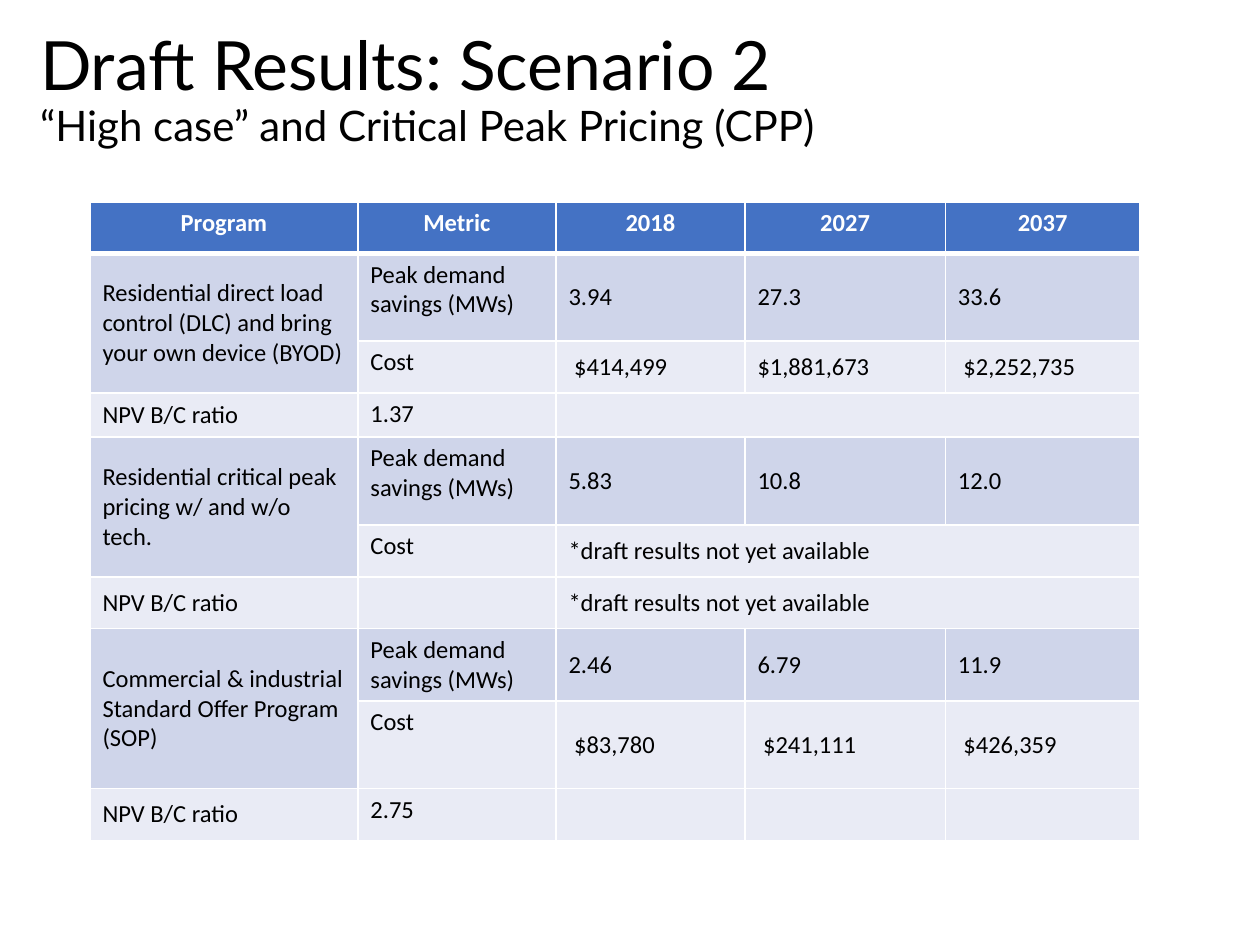
"""Build the slide of draft results for scenario 2."""
from dataclasses import dataclass

from lxml import etree
from pptx import Presentation
from pptx import util as u
from pptx.dml.color import RGBColor
from pptx.enum import text
from pptx.oxml import ns

BLACK = RGBColor(0x00, 0x00, 0x00)
WHITE = RGBColor(0xFF, 0xFF, 0xFF)
BLUE = RGBColor(0x44, 0x72, 0xC4)
DARK = RGBColor(0xCF, 0xD5, 0xEA)
LIGHT = RGBColor(0xE9, 0xEB, 0xF5)

SIZE = 14
PEAK = "Peak demand savings (MWs)"
RATIO = "NPV B/C ratio"
DRAFT = "*draft results not yet available"
WIDTHS = (153.1, 113.2, 108, 114.5, 111.3)


@dataclass(frozen=True)
class Row:
    high: float
    cells: tuple[str, ...]
    fill: RGBColor = LIGHT
    tall: bool = False
    wide: bool = False


ROWS = (
    Row(29.4, ("Program", "Metric", "2018", "2027", "2037"), BLUE),
    Row(50.2, ("Residential direct load control (DLC) and bring your own device (BYOD)",
               PEAK, "3.94", "27.3", "33.6"), DARK, tall=True),
    Row(29.7, ("", "Cost", " $414,499", "$1,881,673", " $2,252,735")),
    Row(25.1, (RATIO, "1.37", "", "", ""), wide=True),
    Row(50.2, ("Residential critical peak pricing w/ and w/o tech.",
               PEAK, "5.83", "10.8", "12.0"), DARK, tall=True),
    Row(29.7, ("", "Cost", DRAFT, "", ""), wide=True),
    Row(29.7, (RATIO, "", DRAFT, "", ""), wide=True),
    Row(41.2, ("Commercial & industrial Standard Offer Program (SOP)",
               PEAK, "2.46", "6.79", "11.9"), DARK, tall=True),
    Row(50.2, ("", "Cost", " $83,780", " $241,111", " $426,359")),
    Row(29.7, (RATIO, "2.75", "", "", "")),
)


def write(para, words: str, *, size: float = SIZE, face: str = "Calibri",
          color: RGBColor = BLACK, bold: bool = False) -> None:
    run = para.add_run()
    run.text = words
    run.font.size = u.Pt(size)
    run.font.name = face
    run.font.color.rgb = color
    run.font.bold = bold


def edge(cell, side: str, width: float) -> None:
    line = etree.SubElement(cell._tc.get_or_add_tcPr(), ns.qn(f"a:ln{side}"),
                            w=str(u.Pt(width)))
    fill = etree.SubElement(line, ns.qn("a:solidFill"))
    etree.SubElement(fill, ns.qn("a:srgbClr"), val=str(WHITE))


def draw_cell(cell, words: str, row: int, col: int) -> None:
    head = row == 0
    for side in "LRTB":
        thick = (row, side) in ((0, "B"), (1, "T"))
        edge(cell, side, 3 if thick else 1)
    cell.fill.solid()
    cell.fill.fore_color.rgb = ROWS[row].fill
    top = head or col == 1
    cell.vertical_anchor = text.MSO_ANCHOR.TOP if top else text.MSO_ANCHOR.MIDDLE
    para = cell.text_frame.paragraphs[0]
    if head:
        para.alignment = text.PP_ALIGN.CENTER
    if words:
        write(para, words, color=WHITE if head else BLACK, bold=head)
    else:
        para._p.get_or_add_endParaRPr().set("sz", str(SIZE * 100))


def draw_grid(slide) -> None:
    highs = [row.high for row in ROWS]
    grid = slide.shapes.add_table(
        len(ROWS), len(WIDTHS), u.Pt(51.4), u.Pt(115.4),
        u.Pt(sum(WIDTHS)), u.Pt(sum(highs))).table
    for col, width in zip(grid.columns, WIDTHS):
        col.width = u.Pt(width)
    for r, row in enumerate(ROWS):
        grid.rows[r].height = u.Pt(row.high)
        for c, words in enumerate(row.cells):
            draw_cell(grid.cell(r, c), words, r, c)
    for r, row in enumerate(ROWS):
        if row.tall:
            grid.cell(r, 0).merge(grid.cell(r + 1, 0))
        if row.wide:
            grid.cell(r, 2).merge(grid.cell(r, 4))


def draw_title(slide) -> None:
    box = slide.shapes.add_textbox(u.Pt(15.8), u.Pt(0), u.Pt(620.6), u.Pt(104.4))
    frame = box.text_frame
    frame.word_wrap = True
    frame.vertical_anchor = text.MSO_ANCHOR.MIDDLE
    para = frame.paragraphs[0]
    para.line_spacing = 0.9
    write(para, "Draft Results: Scenario 2", size=38.8, face="Lato")
    para.add_line_break()
    write(para, "“High case” and Critical Peak Pricing (CPP)", size=24, face="Lato")


def main() -> None:
    deck = Presentation()
    deck.slide_width, deck.slide_height = u.Pt(720), u.Pt(540)
    slide = deck.slides.add_slide(deck.slide_layouts[6])
    draw_title(slide)
    draw_grid(slide)
    deck.save("out.pptx")


if __name__ == "__main__":
    main()
